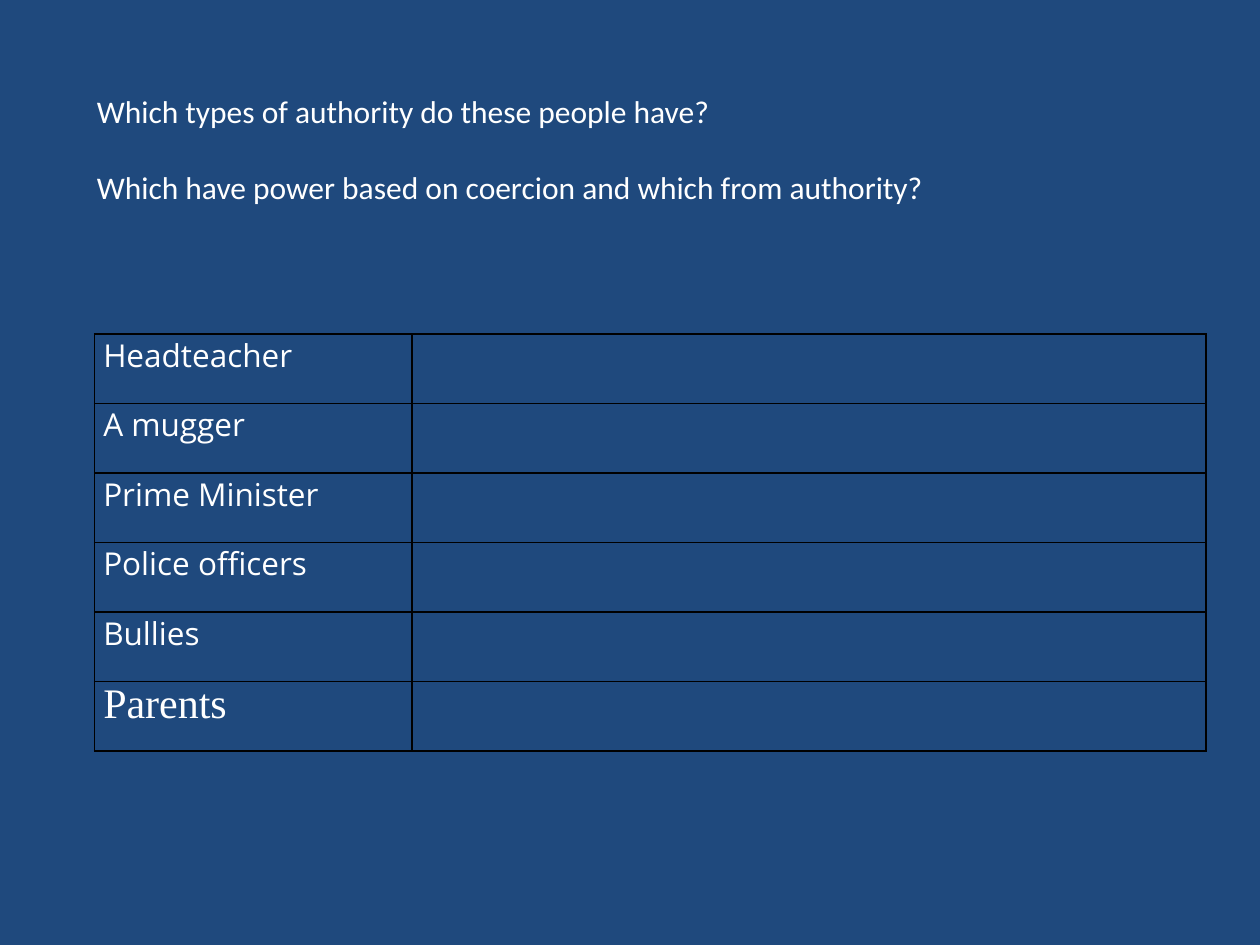
from lxml import etree
from pptx import Presentation
from pptx.dml.color import RGBColor as RGB
from pptx.oxml.ns import qn
from pptx.util import Inches, Pt

NAVY, WHITE, BLACK = "1F497D", "FFFFFF", "000000"
ASKS = [
    "Which types of authority do these people have?",
    "Which have power based on coercion and which from authority?",
]
ROLES = ["Headteacher", "A mugger", "Prime Minister", "Police officers",
         "Bullies", "Parents"]


def color(code):
    return RGB.from_string(code)


def write(para, text, font="Calibri", size=18, code=WHITE, before=0):
    para.space_before = Pt(before)
    run = para.add_run()
    run.text = text
    run.font.name = font
    run.font.size = Pt(size)
    run.font.color.rgb = color(code)


def border(cell, code=BLACK, width=1):
    props = cell._tc.get_or_add_tcPr()
    for spot, side in enumerate(("lnL", "lnR", "lnT", "lnB")):
        line = etree.Element(qn(f"a:{side}"), w=str(Pt(width)))
        fill = etree.SubElement(line, qn("a:solidFill"))
        etree.SubElement(fill, qn("a:srgbClr"), val=code)
        props.insert(spot, line)  # borders must precede the cell fill


def add_asks(slide, left, top, width, height):
    box = slide.shapes.add_textbox(
        Inches(left), Inches(top), Inches(width), Inches(height))
    frame = box.text_frame
    frame.word_wrap = True
    write(frame.paragraphs[0], ASKS[0])
    for ask in ASKS[1:]:
        write(frame.add_paragraph(), ask, before=22)


def add_roles(slide, left, top, width, height, first=2.52):
    """Table of roles, with an empty column for the answers."""
    table = slide.shapes.add_table(
        len(ROLES), 2, Inches(left), Inches(top),
        Inches(width), Inches(height)).table
    table.first_row = table.horz_banding = False
    table.columns[0].width = Inches(first)
    table.columns[1].width = Inches(width - first)
    for cell in table.iter_cells():
        cell.fill.background()
        cell.margin_left = cell.margin_right = Inches(0.07)
        cell.margin_top = cell.margin_bottom = 0
        border(cell)
    for row, role in enumerate(ROLES):
        last = role == ROLES[-1]
        write(table.cell(row, 0).text_frame.paragraphs[0], role,
              font="Times New Roman" if last else "Open Sans",
              size=24 if last else 18)


def main():
    deck = Presentation()
    deck.slide_width, deck.slide_height = Inches(10), Inches(7.5)
    slide = deck.slides.add_slide(deck.slide_layouts[6])
    back = slide.background.fill
    back.solid()
    back.fore_color.rgb = color(NAVY)
    add_roles(slide, 0.75, 2.65, 8.82, 3.31)
    add_asks(slide, 0.67, 0.68, 8.66, 1.01)
    deck.save("out.pptx")


if __name__ == "__main__":
    main()
